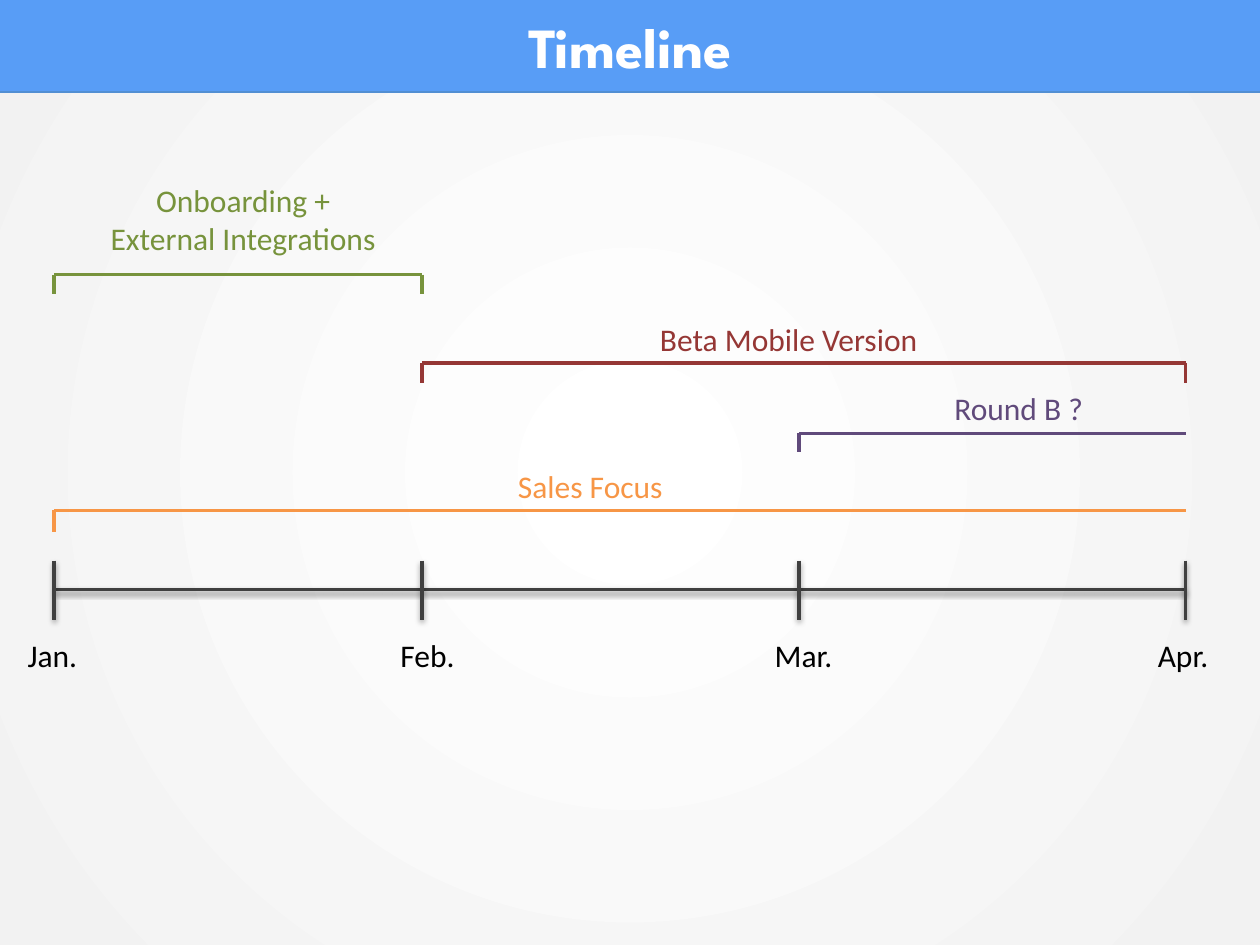
from lxml import etree
from pptx import Presentation
from pptx.dml.color import RGBColor
from pptx.enum.shapes import MSO_CONNECTOR, MSO_SHAPE
from pptx.enum.text import MSO_ANCHOR, PP_ALIGN
from pptx.oxml import parse_xml
from pptx.oxml.ns import nsdecls, qn
from pptx.util import Inches, Pt

STRAIGHT = MSO_CONNECTOR.STRAIGHT
RECT = MSO_SHAPE.RECTANGLE
LEFT, CENTER = PP_ALIGN.LEFT, PP_ALIGN.CENTER
TOP, MIDDLE = MSO_ANCHOR.TOP, MSO_ANCHOR.MIDDLE

WHITE = RGBColor(0xFF, 0xFF, 0xFF)
PALE = RGBColor(0xF2, 0xF2, 0xF2)
BLACK = RGBColor(0x00, 0x00, 0x00)
GRAY = RGBColor(0x40, 0x40, 0x40)
BLUE = RGBColor(0x58, 0x9D, 0xF6)
EDGE = RGBColor(0x52, 0x8F, 0xD3)
ORANGE = RGBColor(0xF7, 0x96, 0x46)
PURPLE = RGBColor(0x60, 0x4A, 0x7B)
RED = RGBColor(0x95, 0x37, 0x35)
GREEN = RGBColor(0x77, 0x93, 0x3C)

JAN, FEB, MAR, APR = 0.43, 3.35, 6.34, 9.41
AXIS = 4.68
# month, tick x, label left
MONTHS = [("Jan.", JAN, 0.12), ("Feb.", FEB, 3.08),
          ("Mar.", MAR, 6.05), ("Apr.", APR, 9.09)]
# text, colour, start, end, y, drop, closed at the end, label box
PHASES = [
    ("Sales Focus", ORANGE, JAN, APR, 4.05, 0.17, False, (3.82, 3.66, 1.73, 0.4)),
    ("Round B ?", PURPLE, MAR, APR, 3.44, 0.15, False, (7.46, 3.04, 1.25, 0.4)),
    ("Beta Mobile Version", RED, FEB, APR, 2.88, 0.16, True, (5.08, 2.49, 2.36, 0.4)),
    ("Onboarding + External Integrations", GREEN, JAN, FEB, 2.18, 0.15, True,
     (0.75, 1.39, 2.36, 0.71)),
]
SHADOW = (
    f'<a:effectLst {nsdecls("a")}>'
    '<a:outerShdw blurRad="39370" dist="20320" dir="5400000" rotWithShape="0">'
    '<a:srgbClr val="000000"><a:alpha val="38000"/></a:srgbClr>'
    '</a:outerShdw></a:effectLst>'
)


class Page:
    def __init__(self, slide, font="Calibri", size=18, width=2):
        self.slide, self.font, self.size, self.width = slide, font, size, width
        self.shapes = slide.shapes

    def glow(self, inner, outer):
        """Fill the background with a circular gradient."""
        fill = self.slide.background.fill
        fill.gradient()
        for stop, color in zip(fill.gradient_stops, (inner, outer)):
            stop.color.rgb = color
        grad = self.slide.element.find(".//" + qn("a:gradFill"))
        grad.remove(grad.find(qn("a:lin")))
        way = etree.SubElement(grad, qn("a:path"), path="circle")
        etree.SubElement(way, qn("a:fillToRect"),
                         l="50000", t="50000", r="50000", b="50000")

    def bar(self, box, color):
        shape = self.shapes.add_shape(RECT, *map(Inches, box))
        shape.shadow.inherit = False
        shape.fill.solid()
        shape.fill.fore_color.rgb = color
        shape.line.fill.background()

    def line(self, x1, y1, x2, y2, color, width=None, shadow=False, home=None):
        line = (home or self.shapes).add_connector(
            STRAIGHT, *map(Inches, (x1, y1, x2, y2)))
        line.line.color.rgb = color
        line.line.width = Pt(width or self.width)
        effect = SHADOW if shadow else f'<a:effectLst {nsdecls("a")}/>'
        line.element.spPr.append(parse_xml(effect))

    def text(self, words, box, color, align=LEFT, anchor=TOP, font=None,
             size=None, bold=False, home=None):
        frame = (home or self.shapes).add_textbox(*map(Inches, box)).text_frame
        frame.word_wrap = True
        frame.vertical_anchor = anchor
        frame.text = words
        para = frame.paragraphs[0]
        para.alignment = align
        style = para.runs[0].font
        style.name = font or self.font
        style.size = Pt(size or self.size)
        style.bold = bold
        style.color.rgb = color

    def phase(self, words, color, start, end, y, drop, closed, box):
        """Draw a labelled bracket over a span of months."""
        home = self.shapes.add_group_shape().shapes
        self.line(start, y, end, y, color, home=home)
        for x in (start, end) if closed else (start,):
            self.line(x, y, x, y + drop, color, home=home)
        self.text(words, box, color, CENTER, home=home)


def main():
    deck = Presentation()
    deck.slide_width, deck.slide_height = Inches(10), Inches(7.5)
    page = Page(deck.slides.add_slide(deck.slide_layouts[6]))

    page.glow(WHITE, PALE)
    page.bar((0, 0, 10, 0.73), BLUE)
    page.line(0, 0.73, 10, 0.73, EDGE, 0.75)
    page.text("Timeline", (0.5, 0.05, 9, 0.63), WHITE, CENTER, MIDDLE,
              "League Spartan", 32.4, True)

    page.line(JAN, AXIS, APR, AXIS, GRAY, shadow=True)
    for month, x, left in MONTHS:
        page.line(x, 4.45, x, 4.92, GRAY, shadow=True)
        page.text(month, (left, 5, 0.71, 0.4), BLACK)
    for phase in PHASES:
        page.phase(*phase)

    deck.save("out.pptx")


if __name__ == "__main__":
    main()
